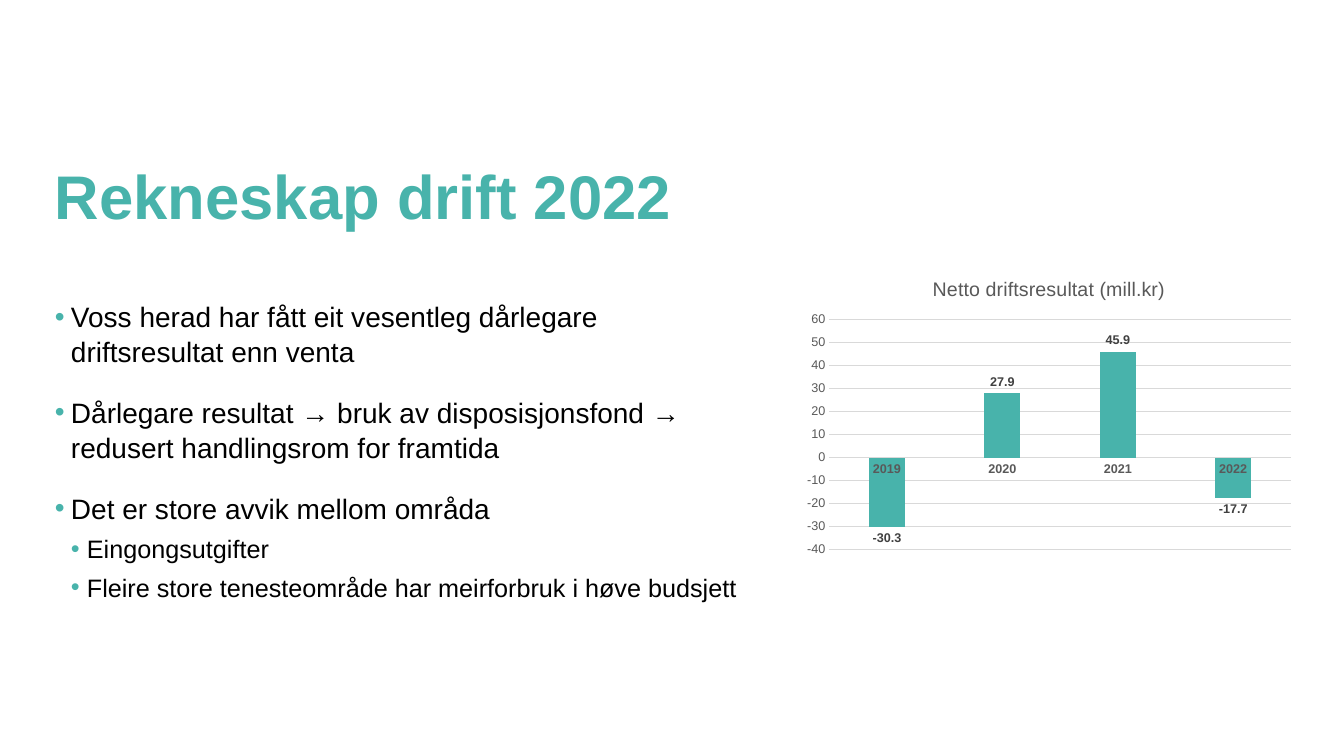
import pptx
import pptx.chart.data
import pptx.dml.color
import pptx.enum.chart
import pptx.enum.text
import pptx.oxml
import pptx.oxml.ns
import pptx.util

TITLE = "Rekneskap drift 2022"
BULLETS = [
    (0, "Voss herad har fått eit vesentleg dårlegare driftsresultat enn venta"),
    (0, "Dårlegare resultat → bruk av disposisjonsfond → redusert handlingsrom for framtida"),
    (0, "Det er store avvik mellom områda"),
    (1, "Eingongsutgifter"),
    (1, "Fleire store tenesteområde har meirforbruk i høve budsjett"),
]
CHART_TITLE = "Netto driftsresultat (mill.kr)"
RESULTS = {"2019": -30.3, "2020": 27.9, "2021": 45.9, "2022": -17.7}

THEME = {
    "font": "Arial",
    "accent": "48B3AB", "text": "000000", "muted": "595959",
    "label": "404040", "grid": "D9D9D9",
    "title": 44, "levels": (20, 18), "space_before": (18, 5),
    "chart_title": 14, "chart": 10, "axis": 9, "line": 0.75,
}
SLIDE_SIZE = (1344, 756)
TITLE_BOX = (55, 85, 1233, 148)
BODY_BOX = (55, 298, 684, 370)
CHART_BOX = (797, 261, 504, 302)
INDENT = 16
EMU_PER_PX = 914400 / 100.8


def px(length):
    return pptx.util.Emu(round(length * EMU_PER_PX))


def color(name):
    return pptx.dml.color.RGBColor.from_string(THEME[name])


def style_font(font, size, color_name, bold=False):
    font.name = THEME["font"]
    font.size = pptx.util.Pt(size)
    font.bold = bold
    font.color.rgb = color(color_name)


def add_bullet(paragraph, level):
    properties = paragraph._p.get_or_add_pPr()
    properties.set("marL", str(px(INDENT * (level + 1))))
    properties.set("indent", str(-px(INDENT)))
    namespace = pptx.oxml.ns.nsdecls("a")
    for xml in (
        f'<a:buClr {namespace}><a:srgbClr val="{THEME["accent"]}"/></a:buClr>',
        f'<a:buFont {namespace} typeface="{THEME["font"]}"/>',
        f'<a:buChar {namespace} char="•"/>',
    ):
        properties.append(pptx.oxml.parse_xml(xml))


def add_text(slide, box, lines, *, sizes, color_name, bold=False, bullets=False,
             anchor="TOP", line_spacing=1.0, space_before=(0, 0)):
    shape = slide.shapes.add_textbox(*map(px, box))
    frame = shape.text_frame
    frame.word_wrap = True
    frame.vertical_anchor = getattr(pptx.enum.text.MSO_ANCHOR, anchor)
    frame.margin_left = frame.margin_right = frame.margin_top = frame.margin_bottom = 0
    for index, (level, text) in enumerate(lines):
        paragraph = frame.paragraphs[0] if index == 0 else frame.add_paragraph()
        paragraph.level = level
        paragraph.line_spacing = line_spacing
        paragraph.space_before = pptx.util.Pt(space_before[level] if index else 0)
        if bullets:
            add_bullet(paragraph, level)
        run = paragraph.add_run()
        run.text = text
        style_font(run.font, sizes[level], color_name, bold)


def style_line(line):
    line.color.rgb = color("grid")
    line.width = pptx.util.Pt(THEME["line"])


def add_result_chart(slide):
    enums = pptx.enum.chart
    data = pptx.chart.data.CategoryChartData()
    data.categories = list(RESULTS)
    data.add_series(CHART_TITLE, list(RESULTS.values()))
    chart = slide.shapes.add_chart(
        enums.XL_CHART_TYPE.COLUMN_CLUSTERED, *map(px, CHART_BOX), data).chart
    style_font(chart.font, THEME["chart"], "text")
    chart.has_legend = False
    chart.has_title = True
    heading = chart.chart_title.text_frame
    heading.text = CHART_TITLE
    style_font(heading.paragraphs[0].runs[0].font, THEME["chart_title"], "muted")

    for axis, bold in ((chart.category_axis, True), (chart.value_axis, False)):
        axis.major_tick_mark = axis.minor_tick_mark = enums.XL_TICK_MARK.NONE
        style_font(axis.tick_labels.font, THEME["axis"], "muted", bold)
    style_line(chart.category_axis.format.line)
    values = chart.value_axis
    values.format.line.fill.background()
    values.minimum_scale, values.maximum_scale, values.major_unit = -40, 60, 10
    values.has_major_gridlines = True
    style_line(values.major_gridlines.format.line)

    plot = chart.plots[0]
    plot.vary_by_categories = False
    plot.gap_width, plot.overlap = 219, -27
    series = plot.series[0]
    series.invert_if_negative = False
    series.format.fill.solid()
    series.format.fill.fore_color.rgb = color("accent")
    labels = series.data_labels
    labels.show_value = True
    labels.position = enums.XL_LABEL_POSITION.OUTSIDE_END
    style_font(labels.font, THEME["axis"], "label", True)


def main():
    presentation = pptx.Presentation()
    presentation.slide_width, presentation.slide_height = map(px, SLIDE_SIZE)
    slide = presentation.slides.add_slide(presentation.slide_layouts[6])
    add_text(slide, BODY_BOX, BULLETS, sizes=THEME["levels"], color_name="text",
             bullets=True, line_spacing=1.05, space_before=THEME["space_before"])
    add_text(slide, TITLE_BOX, [(0, TITLE)], sizes=(THEME["title"],),
             color_name="accent", bold=True, anchor="BOTTOM", line_spacing=0.9)
    add_result_chart(slide)
    presentation.save("out.pptx")


if __name__ == "__main__":
    main()
